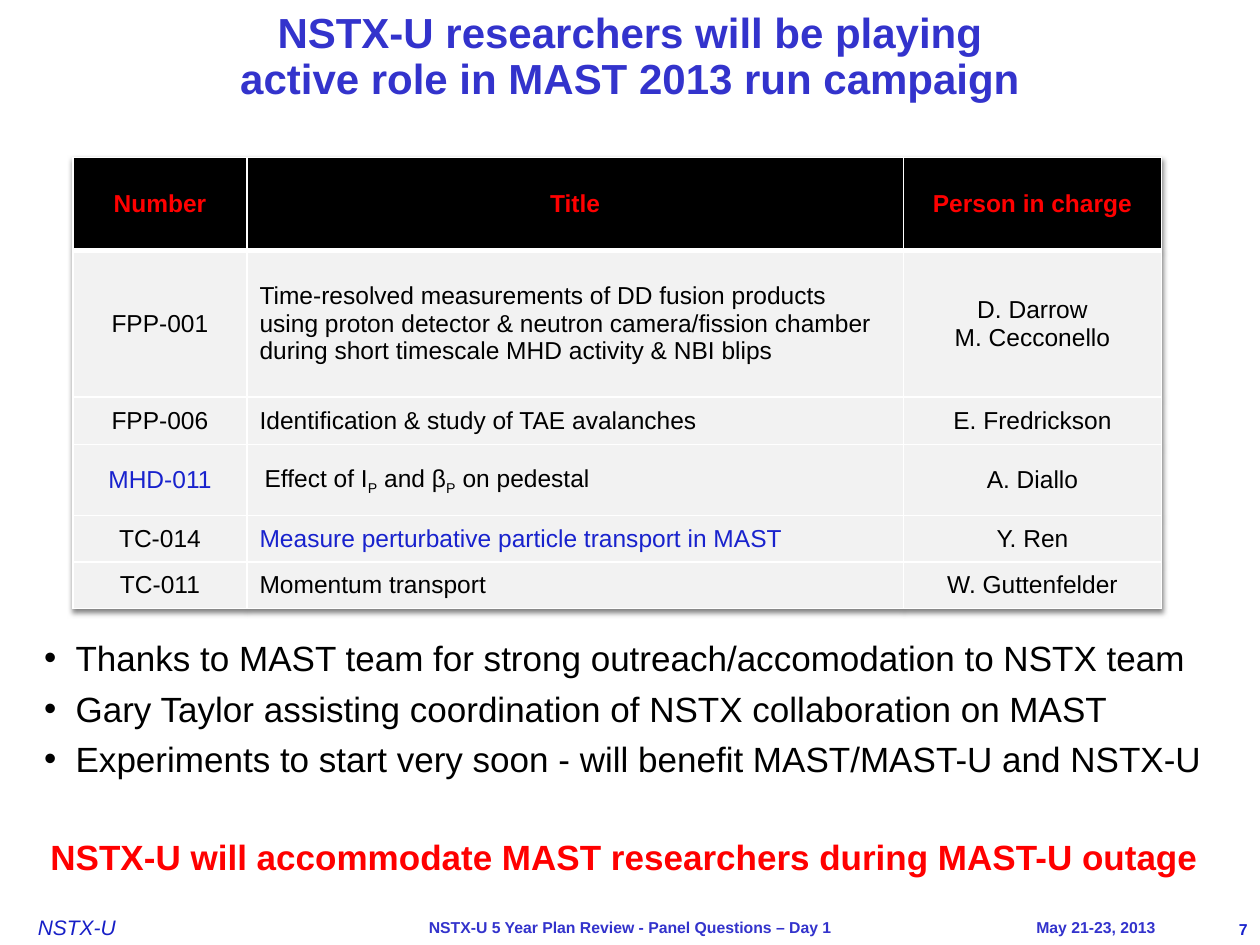
from lxml.etree import SubElement
from pptx import Presentation
from pptx.dml.color import RGBColor as RGB
from pptx.enum.text import MSO_ANCHOR as Anchor, MSO_AUTO_SIZE as Fit, PP_ALIGN as Align
from pptx.oxml import parse_xml
from pptx.oxml.ns import nsdecls, qn
from pptx.util import Inches, Pt

HUES = {"title": "3333CC", "blue": "1822CD", "mark": "171FC7", "red": "FF0000",
        "black": "000000", "white": "FFFFFF", "pale": "F2F2F2"}
TITLE = ["NSTX-U researchers will be playing\vactive role in MAST 2013 run campaign"]
ROWS = [
    ("Number", "Title", "Person in charge"),
    ("FPP-001",
     "Time-resolved measurements of DD fusion products using proton detector "
     "& neutron camera/fission chamber during short timescale MHD activity & NBI blips",
     "D. Darrow\nM. Cecconello"),
    ("FPP-006", "Identification & study of TAE avalanches", "E. Fredrickson"),
    ("MHD-011", "Effect of I_P_ and β_P_ on pedestal", "A. Diallo"),
    ("TC-014", "Measure perturbative particle transport in MAST", "Y. Ren"),
    ("TC-011", "Momentum transport", "W. Guttenfelder"),
]
WIDTHS = [1.38, 5.21, 2.05]
HEIGHTS = [0.74, 1.16, 0.38, 0.56, 0.37, 0.37]
BLUE_CELLS = {(3, 0), (4, 1)}
SUB_CELL = (3, 1)
POINTS = [
    "Thanks to MAST team for strong outreach/accomodation to NSTX team",
    "Gary Taylor assisting coordination of NSTX collaboration on MAST",
    "Experiments to start very soon - will benefit MAST/MAST-U and NSTX-U",
]
NOTES = [
    ("NSTX-U 5 Year Plan Review - Panel Questions – Day 1", (2.25, 7.23, 5.5, 0.25),
     dict(size=9, hue="title", bold=True, align=Align.CENTER, anchor=Anchor.MIDDLE, pad=0)),
    ("May 21-23, 2013", (7, 7.23, 2.17, 0.25),
     dict(size=9, hue="title", bold=True, align=Align.RIGHT, anchor=Anchor.MIDDLE, pad=0)),
    ("NSTX-U", (0.3, 7.26, 0.87, 0.2), dict(size=12, hue="mark", italic=True, pad=0)),
    ("7", (9.17, 7.25, 0.83, 0.17), dict(size=9, hue="blue", bold=True, align=Align.RIGHT)),
    ("NSTX-U will accommodate MAST researchers during MAST-U outage", (0.08, 6.58, 9.75, 0.44),
     dict(size=20, hue="red", bold=True, align=Align.CENTER, wrap=False)),
]


def write(frame, lines, size=14, hue="black", bold=False, italic=False, align=Align.LEFT,
          anchor=Anchor.TOP, pad=None, wrap=True, gap=0, spacing=None, bullet=False):
    frame.word_wrap = wrap
    frame.vertical_anchor = anchor
    if pad is not None:
        frame.margin_left = frame.margin_right = Inches(pad)
        frame.margin_top = frame.margin_bottom = Inches(pad)
    for i, line in enumerate(lines):
        para = frame.add_paragraph() if i else frame.paragraphs[0]
        if bullet:
            props = para._p.get_or_add_pPr()
            props.set("marL", str(Inches(0.25)))
            props.set("indent", str(Inches(-0.25)))
            SubElement(props, qn("a:buChar"), char="•")
        para.alignment = align
        para.space_before = Pt(gap if i else 0)
        if spacing:
            para.line_spacing = spacing
        for j, part in enumerate(line.split("\v")):
            if j:
                para.add_line_break()
            for k, piece in enumerate(part.split("_")):
                run = para.add_run()
                run.text = piece
                font = run.font
                font.name, font.size, font.bold, font.italic = "Arial", Pt(size), bold, italic
                font.color.rgb = RGB.from_string(HUES[hue])
                if k % 2:
                    run._r.get_or_add_rPr().set("baseline", "-25000")


def edge(cell, row):
    props = cell._tc.get_or_add_tcPr()
    thick = {"lnT": 3 if row == 1 else 1, "lnB": 3 if row == 0 else 1}
    for i, side in enumerate(("lnL", "lnR", "lnT", "lnB")):
        props.insert(i, parse_xml(
            f'<a:{side} {nsdecls("a")} w="{Pt(thick.get(side, 1))}"><a:solidFill>'
            f'<a:srgbClr val="{HUES["white"]}"/></a:solidFill></a:{side}>'))


def place(shape, box):
    shape.left, shape.top, shape.width, shape.height = map(Inches, box)
    return shape.text_frame


def main():
    deck = Presentation()
    deck.slide_width, deck.slide_height = Inches(10), Inches(7.5)
    slide = deck.slides.add_slide(deck.slide_layouts[1])
    shapes = slide.shapes

    head = place(shapes.title, (0, 0, 10, 0.92))
    head.auto_size = Fit.NONE
    write(head, TITLE, size=24, hue="title", bold=True, align=Align.CENTER,
          anchor=Anchor.MIDDLE, spacing=0.9)
    body = place(slide.placeholders[1], (0.25, 5, 9.58, 1.25))
    body.auto_size = Fit.NONE
    write(body, POINTS, size=20, gap=5, bullet=True)

    box = map(Inches, (0.58, 1.25, sum(WIDTHS), sum(HEIGHTS)))
    table = shapes.add_table(len(ROWS), len(WIDTHS), *box).table
    table._tbl.tblPr.insert(0, parse_xml(
        f'<a:effectLst {nsdecls("a")}><a:outerShdw blurRad="40000" dist="23000" dir="5400000" '
        f'rotWithShape="0"><a:srgbClr val="{HUES["black"]}"><a:alpha val="50000"/>'
        '</a:srgbClr></a:outerShdw></a:effectLst>'))
    for col, width in zip(table.columns, WIDTHS):
        col.width = Inches(width)
    for r, (row, height) in enumerate(zip(ROWS, HEIGHTS)):
        table.rows[r].height = Inches(height)
        for c, text in enumerate(row):
            cell = table.cell(r, c)
            cell.fill.solid()
            cell.fill.fore_color.rgb = RGB.from_string(HUES["pale" if r else "black"])
            edge(cell, r)
            hue = "red" if r == 0 else "blue" if (r, c) in BLUE_CELLS else "black"
            write(cell.text_frame, text.split("\n"), hue=hue, bold=r == 0,
                  align=Align.LEFT if r and c == 1 else Align.CENTER)
            cell.vertical_anchor = Anchor.MIDDLE
            if (r, c) == SUB_CELL:
                cell.margin_left = Inches(0.14)
                cell.margin_right = cell.margin_top = Inches(0.01)
                cell.margin_bottom = 0

    for text, box, style in NOTES:
        write(place(shapes.add_textbox(0, 0, 0, 0), box), [text], **style)
    deck.save("out.pptx")


if __name__ == "__main__":
    main()
